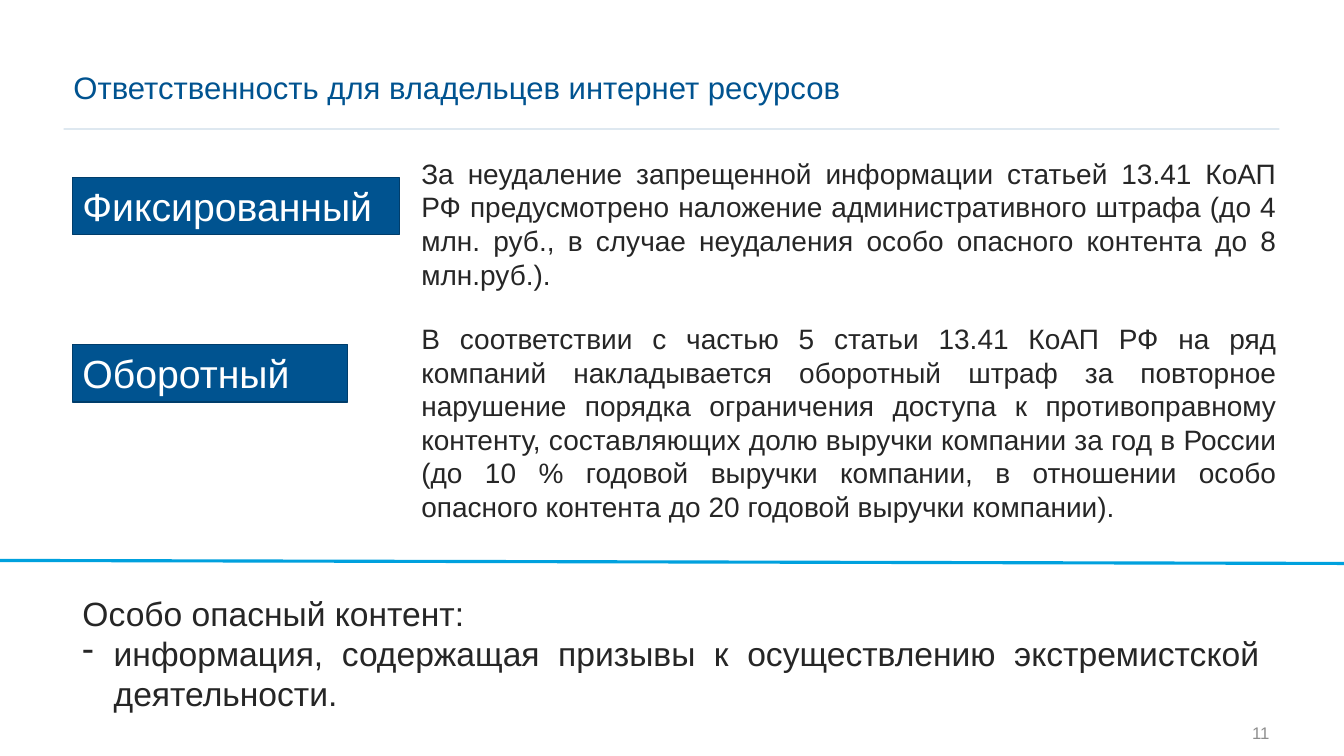
from typing import NamedTuple

from lxml import etree
from pptx import Presentation
from pptx.dml.color import RGBColor
from pptx.enum.shapes import MSO_CONNECTOR, MSO_SHAPE
from pptx.enum.text import MSO_ANCHOR, PP_ALIGN
from pptx.oxml.ns import qn
from pptx.slide import Slide
from pptx.util import Inches, Pt

NAVY = RGBColor(0x00, 0x53, 0x90)
EDGE = RGBColor(0x00, 0x3D, 0x6B)
CYAN = RGBColor(0x00, 0xA1, 0xDE)
DARK = RGBColor(0x26, 0x26, 0x26)
GREY = RGBColor(0x8E, 0x8E, 0x8E)
WHITE = RGBColor(0xFF, 0xFF, 0xFF)

LEFT, RIGHT, JUST = PP_ALIGN.LEFT, PP_ALIGN.RIGHT, PP_ALIGN.JUSTIFY
TOP, MID = MSO_ANCHOR.TOP, MSO_ANCHOR.MIDDLE
RECT, STRAIGHT = MSO_SHAPE.RECTANGLE, MSO_CONNECTOR.STRAIGHT


class Box(NamedTuple):
    left: float
    top: float
    width: float
    height: float
    lines: list[str]
    size: float
    color: RGBColor = DARK
    align: PP_ALIGN = JUST
    anchor: MSO_ANCHOR = TOP
    fill: RGBColor | None = None
    space: float = 1.0


class Rule(NamedTuple):
    start: tuple[float, float]
    end: tuple[float, float]
    color: RGBColor
    width: float
    alpha: int = 100


RULES = [
    Rule((0.63, 1.28), (12.69, 1.28), NAVY, 1, 20),
    Rule((0, 5.56), (13.33, 5.59), CYAN, 2.25),
]

BOXES = [
    Box(0.63, 0.51, 10.48, 0.76, ["Ответственность для владельцев интернет ресурсов"],
        22.2, NAVY, LEFT, MID, space=0.9),
    Box(11.82, 7.07, 0.87, 0.4, ["11"], 12, GREY, RIGHT, MID),
    Box(0.72, 1.76, 3.24, 0.57, ["Фиксированный"], 28, WHITE, LEFT, fill=NAVY),
    Box(0.72, 3.42, 2.73, 0.57, ["Оборотный"], 28, WHITE, LEFT, fill=NAVY),
    Box(4.08, 1.5, 8.68, 1.11, [
        "За неудаление запрещенной информации статьей 13.41 КоАП РФ предусмотрено "
        "наложение административного штрафа (до 4 млн. руб., в случае неудаления "
        "особо опасного контента до 8 млн.руб.)."], 20),
    Box(4.08, 3.14, 8.68, 1.78, [
        "В соответствии с частью 5 статьи 13.41 КоАП РФ на ряд компаний накладывается "
        "оборотный штраф за повторное нарушение порядка ограничения доступа к "
        "противоправному контенту, составляющих долю выручки компании за год в России "
        "(до 10 % годовой выручки компании, в отношении особо опасного контента до 20 "
        "годовой выручки компании)."], 20),
]

DANGER = Box(0.72, 5.83, 11.87, 0.91, [
    "Особо опасный контент:",
    "информация, содержащая призывы к осуществлению экстремистской деятельности."], 24)


def add_rule(slide: Slide, rule: Rule) -> None:
    ends = [Inches(n) for n in rule.start + rule.end]
    line = slide.shapes.add_connector(STRAIGHT, *ends)
    line.line.color.rgb = rule.color
    line.line.width = Pt(rule.width)
    props = line._element.spPr
    if rule.alpha < 100:
        color = props.find(".//" + qn("a:srgbClr"))
        etree.SubElement(color, qn("a:alpha"), val=str(rule.alpha * 1000))
    etree.SubElement(props, qn("a:effectLst"))


def add_box(slide: Slide, box: Box, dash: int | None = None) -> None:
    area = [Inches(n) for n in box[:4]]
    if box.fill is None:
        shape = slide.shapes.add_textbox(*area)
    else:
        shape = slide.shapes.add_shape(RECT, *area)
        shape.shadow.inherit = False
        shape.fill.solid()
        shape.fill.fore_color.rgb = box.fill
        shape.line.color.rgb = EDGE
        shape.line.width = Pt(1)
    frame = shape.text_frame
    frame.word_wrap = True
    frame.vertical_anchor = box.anchor
    frame.text = "\n".join(box.lines)
    for index, para in enumerate(frame.paragraphs):
        para.alignment = box.align
        para.line_spacing = box.space
        if index == dash:
            props = para._p.get_or_add_pPr()
            props.set("marL", str(Inches(0.31)))
            props.set("indent", str(-Inches(0.31)))
            etree.SubElement(props, qn("a:buChar"), char="-")
        para.font.name = "Arial"
        para.font.size = Pt(box.size)
        para.font.color.rgb = box.color


def main() -> None:
    deck = Presentation()
    deck.slide_width = Inches(13.33)
    deck.slide_height = Inches(7.5)
    slide = deck.slides.add_slide(deck.slide_layouts[6])
    for rule in RULES:
        add_rule(slide, rule)
    for box in BOXES:
        add_box(slide, box)
    add_box(slide, DANGER, dash=1)
    deck.save("out.pptx")


if __name__ == "__main__":
    main()
